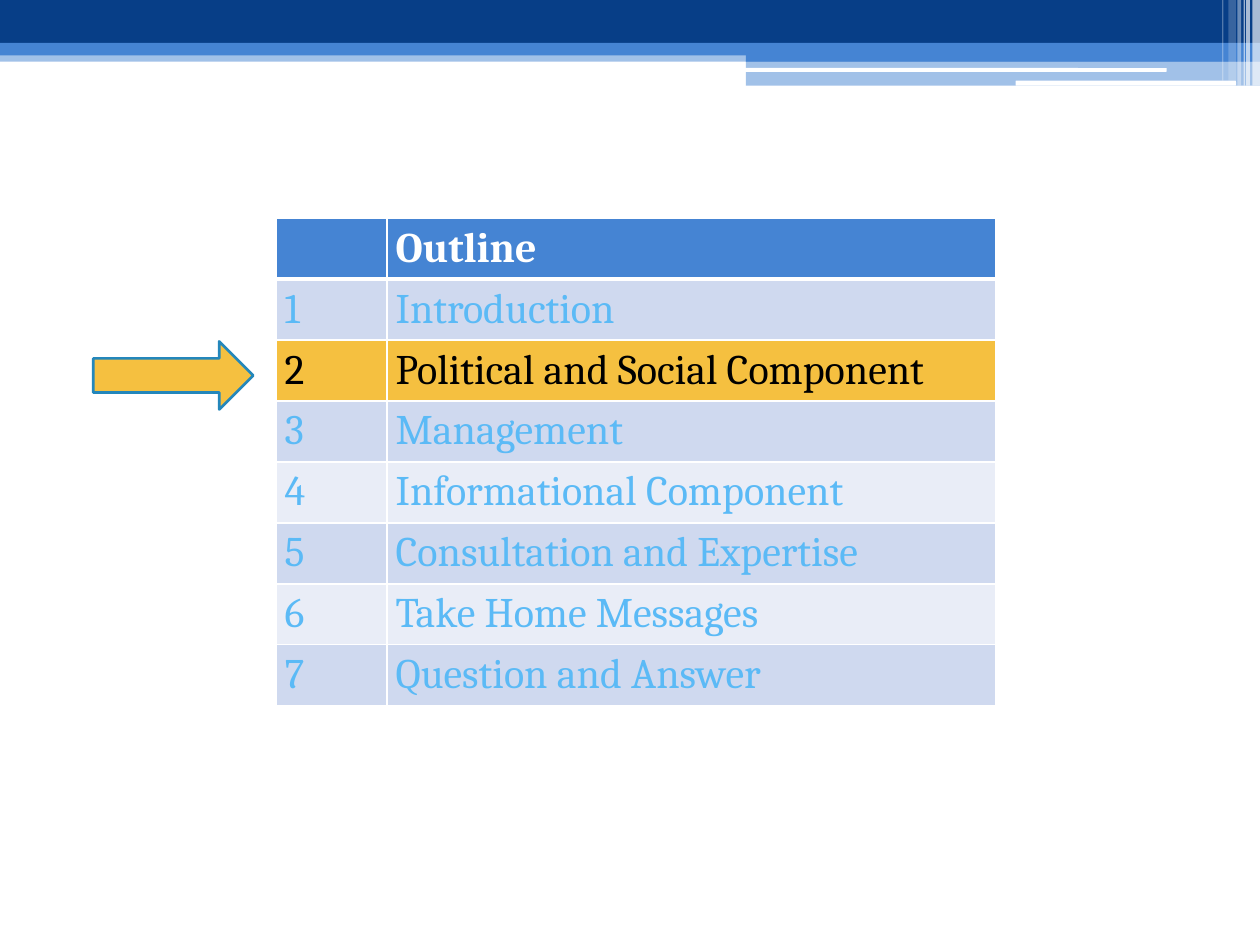
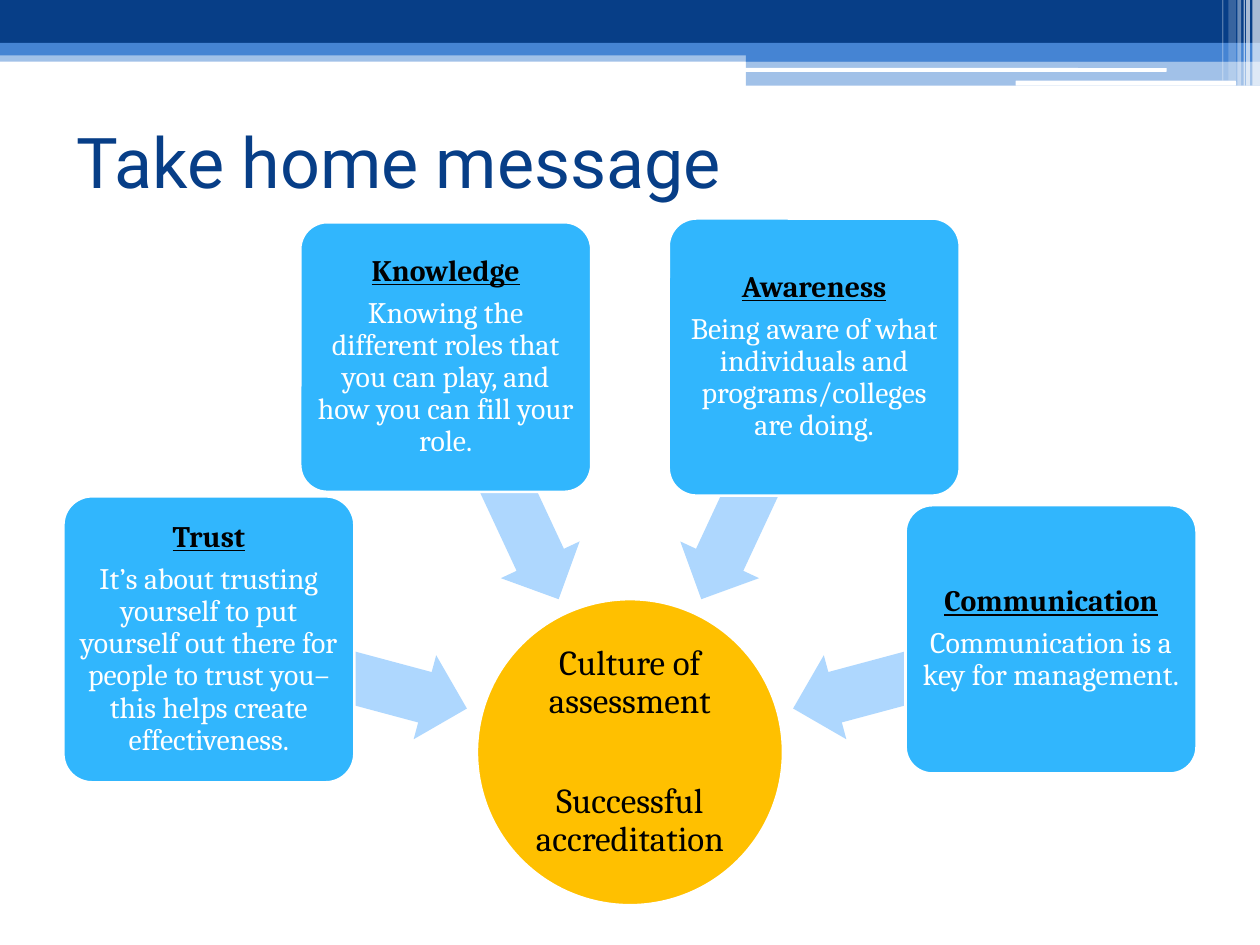
import math

import pptx
import pptx.dml.color
import pptx.enum.shapes
import pptx.enum.text
import pptx.oxml.ns
import pptx.util
from lxml import etree

Inches, Pt = pptx.util.Inches, pptx.util.Pt
RGBColor = pptx.dml.color.RGBColor
SHAPE = pptx.enum.shapes.MSO_SHAPE
ALIGN = pptx.enum.text.PP_ALIGN
MIDDLE = pptx.enum.text.MSO_ANCHOR.MIDDLE
qn = pptx.oxml.ns.qn

NAVY = RGBColor(0x07, 0x3E, 0x87)
BLUE = RGBColor(0x45, 0x84, 0xD3)
WHITE = RGBColor(0xFF, 0xFF, 0xFF)
BLACK = RGBColor(0, 0, 0)
GOLD = RGBColor(0xF5, 0xC0, 0x40)
AMBER = RGBColor(0xFF, 0xC0, 0x00)
SKY = RGBColor(0x31, 0xB6, 0xFD)
PALE_SKY = RGBColor(0xAE, 0xD7, 0xFE)
MUTED = RGBColor(0x5B, 0xBA, 0xF6)
OUTLINE_BLUE = RGBColor(0x24, 0x87, 0xBB)
ROW_TINTS = [RGBColor(0xCF, 0xD9, 0xEF), RGBColor(0xE9, 0xED, 0xF7)]
BODY_FONT, TITLE_FONT = "Cambria", "Roboto"

BANDS = [
    (SHAPE.RECTANGLE, (0, 0.4, 10, 0.09), BLUE, 50),
    (SHAPE.RECTANGLE, (0, 0, 10, 0.34), NAVY, 100),
    (SHAPE.RECTANGLE, (0, 0.34, 10, 0.1), BLUE, 100),
    (SHAPE.RECTANGLE, (5.92, 0.39, 4.08, 0.1), BLUE, 100),
    (SHAPE.RECTANGLE, (5.92, 0.48, 4.08, 0.2), BLUE, 50),
    (SHAPE.ROUNDED_RECTANGLE, (5.91, 0.54, 3.35, 0.03), WHITE, 100),
    (SHAPE.ROUNDED_RECTANGLE, (8.06, 0.64, 1.75, 0.04), WHITE, 100),
    (SHAPE.RECTANGLE, (9.94, 0, 0.06, 0.68), WHITE, 65),
    (SHAPE.RECTANGLE, (9.89, 0, 0.03, 0.68), WHITE, 65),
    (SHAPE.RECTANGLE, (9.87, 0, 0.01, 0.68), WHITE, 60),
    (SHAPE.RECTANGLE, (9.82, 0, 0.03, 0.68), WHITE, 40),
    (SHAPE.RECTANGLE, (9.75, 0, 0.06, 0.64), WHITE, 20),
    (SHAPE.RECTANGLE, (9.7, 0, 0.01, 0.64), WHITE, 30),
]

OUTLINE_HEADING = "Outline"
OUTLINE_TOPICS = [
    "Introduction",
    "Political and Social Component",
    "Management",
    "Informational Component",
    "Consultation and Expertise",
    "Take Home Messages",
    "Question and Answer",
]
CURRENT_TOPIC = 2
OUTLINE_COLUMNS = [0.88, 4.83]
OUTLINE_ROW = 0.48

MESSAGE_TITLE = "Take home message"
GOALS = ["Culture of assessment", "Successful accreditation"]
HUB_X, HUB_Y, HUB_SIZE = 5, 5.97, 2.43
ARROW_DISTANCE, CARD_DISTANCE = 2.4, 3.46
ARROW_SIZE, CARD_WIDTH = (2.12, 0.69), 2.31
CARDS = [
    ("Trust", "It’s about trusting yourself to put yourself out there for "
     "people to trust you– this helps create effectiveness.", 195, 2.27),
    ("Knowledge", "Knowing the different roles that you can play, and how "
     "you can fill your role.", 245, 2.14),
    ("Awareness", "Being aware of what individuals and programs/colleges "
     "are doing.", 295, 2.2),
    ("Communication", "Communication is a key for management.", 345, 2.13),
]


def add_filled(slide, preset, box, fill, line=None, opacity=100):
    shape = slide.shapes.add_shape(preset, *map(Inches, box))
    shape.shadow.inherit = False
    shape.fill.solid()
    shape.fill.fore_color.rgb = fill
    if opacity < 100:
        color = shape.element.spPr.find(f".//{qn('a:srgbClr')}")
        etree.SubElement(color, qn("a:alpha"), val=str(opacity * 1000))
    if line is None:
        shape.line.fill.background()
    else:
        shape.line.color.rgb = line
        shape.line.width = Pt(1.5)
    return shape


def add_run(paragraph, text, size, color, font=BODY_FONT, bold=False, underline=False):
    run = paragraph.add_run()
    run.text = text
    run.font.size = Pt(size)
    run.font.name = font
    run.font.color.rgb = color
    run.font.bold = bold
    run.font.underline = underline


def set_insets(holder, side, end):
    holder.margin_left = holder.margin_right = Inches(side)
    holder.margin_top = holder.margin_bottom = Inches(end)


def fill_centred(shape, inset, gap, runs):
    frame = shape.text_frame
    frame.word_wrap = True
    frame.vertical_anchor = MIDDLE
    set_insets(frame, inset, inset)
    for index, (text, style) in enumerate(runs):
        paragraph = frame.add_paragraph() if index else frame.paragraphs[0]
        paragraph.alignment = ALIGN.CENTER
        paragraph.line_spacing = 0.9
        paragraph.space_after = Pt(0 if index else gap)
        add_run(paragraph, text, **style)


def put_bands_on_master(deck, slide):
    tree = deck.slide_master.shapes.element
    for index, (preset, box, fill, opacity) in enumerate(BANDS):
        band = add_filled(slide, preset, box, fill, opacity=opacity)
        band.element.nvSpPr.cNvPr.set("id", str(100 + index))
        tree.insert(2 + index, band.element)


def set_borders(cell, is_heading):
    properties = cell._tc.get_or_add_tcPr()
    for side in "LRTB":
        points = 3 if is_heading and side == "B" else 1
        border = etree.SubElement(properties, qn(f"a:ln{side}"), w=str(Pt(points)))
        solid = etree.SubElement(border, qn("a:solidFill"))
        etree.SubElement(solid, qn("a:srgbClr"), val=str(WHITE))


def build_outline(slide):
    rows = [("", OUTLINE_HEADING)]
    rows += [(str(number), topic) for number, topic in enumerate(OUTLINE_TOPICS, 1)]
    box = (2.19, 1.73, sum(OUTLINE_COLUMNS), OUTLINE_ROW * len(rows))
    outline = slide.shapes.add_table(len(rows), 2, *map(Inches, box)).table
    for column, width in zip(outline.columns, OUTLINE_COLUMNS):
        column.width = Inches(width)
    for number, texts in enumerate(rows):
        outline.rows[number].height = Inches(OUTLINE_ROW)
        if number == 0:
            fill, color = BLUE, WHITE
        elif number == CURRENT_TOPIC:
            fill, color = GOLD, BLACK
        else:
            fill, color = ROW_TINTS[(number - 1) % 2], MUTED
        for column, text in enumerate(texts):
            cell = outline.cell(number, column)
            set_borders(cell, number == 0)
            cell.fill.solid()
            cell.fill.fore_color.rgb = fill
            set_insets(cell, 0.07, 0.05)
            if text:
                add_run(cell.text_frame.paragraphs[0], text, 24, color, bold=number == 0)
    add_filled(slide, SHAPE.RIGHT_ARROW, (0.74, 2.71, 1.27, 0.54), GOLD, OUTLINE_BLUE)


def around_hub(angle, distance, width, height):
    x = HUB_X + distance * math.cos(math.radians(angle))
    y = HUB_Y + distance * math.sin(math.radians(angle))
    return x - width / 2, y - height / 2, width, height


def build_message(slide):
    title = slide.shapes.title
    title.left, title.top, title.width, title.height = map(Inches, (0.51, 0.69, 9, 1.17))
    title.text_frame.vertical_anchor = MIDDLE
    heading = title.text_frame.paragraphs[0]
    heading.alignment = ALIGN.LEFT
    add_run(heading, MESSAGE_TITLE, 40, NAVY, TITLE_FONT)

    hub = add_filled(slide, SHAPE.OVAL, around_hub(0, 0, HUB_SIZE, HUB_SIZE), AMBER, WHITE)
    goal_style = dict(size=20, color=BLACK)
    fill_centred(hub, 0.01, 36, [(goal, goal_style) for goal in GOALS])

    name_style = dict(size=17, color=BLACK, bold=True, underline=True)
    detail_style = dict(size=17, color=WHITE)
    for name, detail, angle, height in CARDS:
        arrow_box = around_hub(angle, ARROW_DISTANCE, *ARROW_SIZE)
        arrow = add_filled(slide, SHAPE.LEFT_ARROW, arrow_box, PALE_SKY)
        arrow.adjustments[0] = 0.6
        arrow.adjustments[1] = 0.5
        arrow.rotation = angle
        card_box = around_hub(angle, CARD_DISTANCE, CARD_WIDTH, height)
        card = add_filled(slide, SHAPE.ROUNDED_RECTANGLE, card_box, SKY, WHITE)
        card.adjustments[0] = 0.1
        fill_centred(card, 0.04, 5.5, [(name, name_style), (detail, detail_style)])


def main():
    deck = pptx.Presentation()
    deck.slide_width, deck.slide_height = Inches(10), Inches(7.5)
    title_only, blank = deck.slide_layouts[5], deck.slide_layouts[6]
    outline_slide = deck.slides.add_slide(blank)
    put_bands_on_master(deck, outline_slide)
    build_outline(outline_slide)
    build_message(deck.slides.add_slide(title_only))
    deck.save("out.pptx")


if __name__ == "__main__":
    main()
